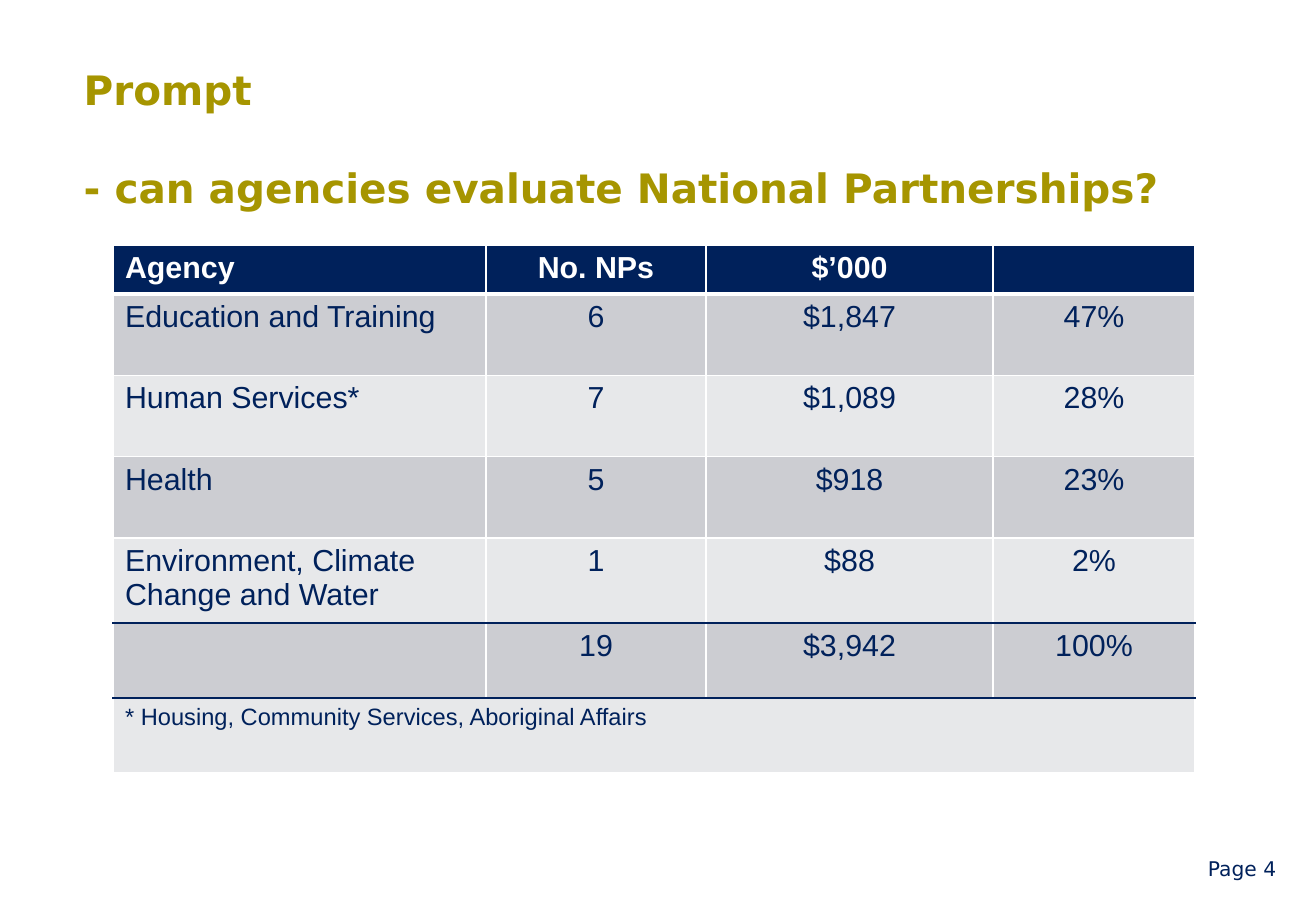
from lxml import etree
from pptx import Presentation, util as u
from pptx.dml.color import RGBColor
from pptx.enum import text
from pptx.oxml.ns import qn

COLORS = {"navy": "00215B", "gold": "A69500", "white": "FFFFFF",
          "dark_band": "CCCDD2", "light_band": "E7E8EA"}
TITLE = {"name": "DejaVu Sans", "size": u.Pt(24), "bold": True}
HEADER = {"name": "Arial", "size": u.Pt(18), "bold": True}
BODY = {**HEADER, "bold": False}
NOTE = {**BODY, "size": u.Pt(14)}
FOOTER = {"name": "DejaVu Sans", "size": u.Pt(12)}

COLUMNS = [7.8, 4.6, 6, 4.22]
HEIGHTS = [0.97] + [1.7] * 4 + [1.57] * 2
AGENCIES = [
    ["Agency", "No. NPs", "$’000", ""],
    ["Education and Training", "6", "$1,847", "47%"],
    ["Human Services*", "7", "$1,089", "28%"],
    ["Health", "5", "$918", "23%"],
    ["Environment, Climate Change and Water", "1", "$88", "2%"],
    ["", "19", "$3,942", "100%"],
    ["* Housing, Community Services, Aboriginal Affairs", "", "", ""],
]
RULES = {1: ("white", 3), 5: ("navy", 1), 6: ("navy", 1)}


def color(name):
    return RGBColor.from_string(COLORS[name])


def write(para, words, style, ink, align=text.PP_ALIGN.LEFT):
    para.alignment = align
    for font in (para.font, para.add_run().font):
        for key, value in style.items():
            setattr(font, key, value)
        font.color.rgb = color(ink)
    para.runs[0].text = words


def add_text_frame(page, box):
    frame = page.shapes.add_textbox(*map(u.Cm, box)).text_frame
    frame.word_wrap = True
    return frame


def add_title(page, box):
    frame = add_text_frame(page, box)
    for side in ("left", "top", "right", "bottom"):
        setattr(frame, "margin_" + side, 0)
    write(frame.paragraphs[0], "Prompt", TITLE, "gold")
    question = frame.add_paragraph()
    question.space_before = u.Pt(29.5)
    write(question, "- can agencies evaluate National Partnerships?", TITLE, "gold")


def add_borders(cell, row):
    edges = {"L": ("white", 1), "R": ("white", 1),
             "T": RULES.get(row, ("white", 1)),
             "B": RULES.get(row + 1, ("white", 1))}
    properties = cell._tc.get_or_add_tcPr()
    for side, (ink, width) in edges.items():
        line = etree.SubElement(properties, qn("a:ln" + side), w=str(u.Pt(width)))
        fill = etree.SubElement(line, qn("a:solidFill"))
        etree.SubElement(fill, qn("a:srgbClr"), val=COLORS[ink])


def add_agency_table(page, box):
    table = page.shapes.add_table(len(HEIGHTS), len(COLUMNS), *map(u.Cm, box)).table
    for column, width in zip(table.columns, COLUMNS):
        column.width = u.Cm(width)
    last = len(HEIGHTS) - 1
    for row, (height, values) in enumerate(zip(HEIGHTS, AGENCIES)):
        table.rows[row].height = u.Cm(height)
        band = "navy" if row == 0 else "dark_band" if row % 2 else "light_band"
        style = {0: HEADER, last: NOTE}.get(row, BODY)
        for index, words in enumerate(values):
            cell = table.cell(row, index)
            add_borders(cell, row)
            cell.fill.solid()
            cell.fill.fore_color.rgb = color(band)
            if words:
                align = text.PP_ALIGN.CENTER if index else text.PP_ALIGN.LEFT
                write(cell.text_frame.paragraphs[0], words, style,
                      "navy" if row else "white", align)
    table.cell(last, 0).merge(table.cell(last, len(COLUMNS) - 1))


def add_page_number(page, box):
    frame = add_text_frame(page, box)
    frame.vertical_anchor = text.MSO_ANCHOR.MIDDLE
    write(frame.paragraphs[0], "Page 4", FOOTER, "navy", text.PP_ALIGN.RIGHT)


def main():
    deck = Presentation()
    deck.slide_width, deck.slide_height = u.Cm(27.51), u.Cm(19.05)
    page = deck.slides.add_slide(deck.slide_layouts[6])
    add_title(page, (1.75, 1.36, 24.41, 3.4))
    add_agency_table(page, (2.36, 5.13, sum(COLUMNS), sum(HEIGHTS)))
    add_page_number(page, (20.5, 17.65, 6.43, 1.02))
    deck.save("out.pptx")


if __name__ == "__main__":
    main()
